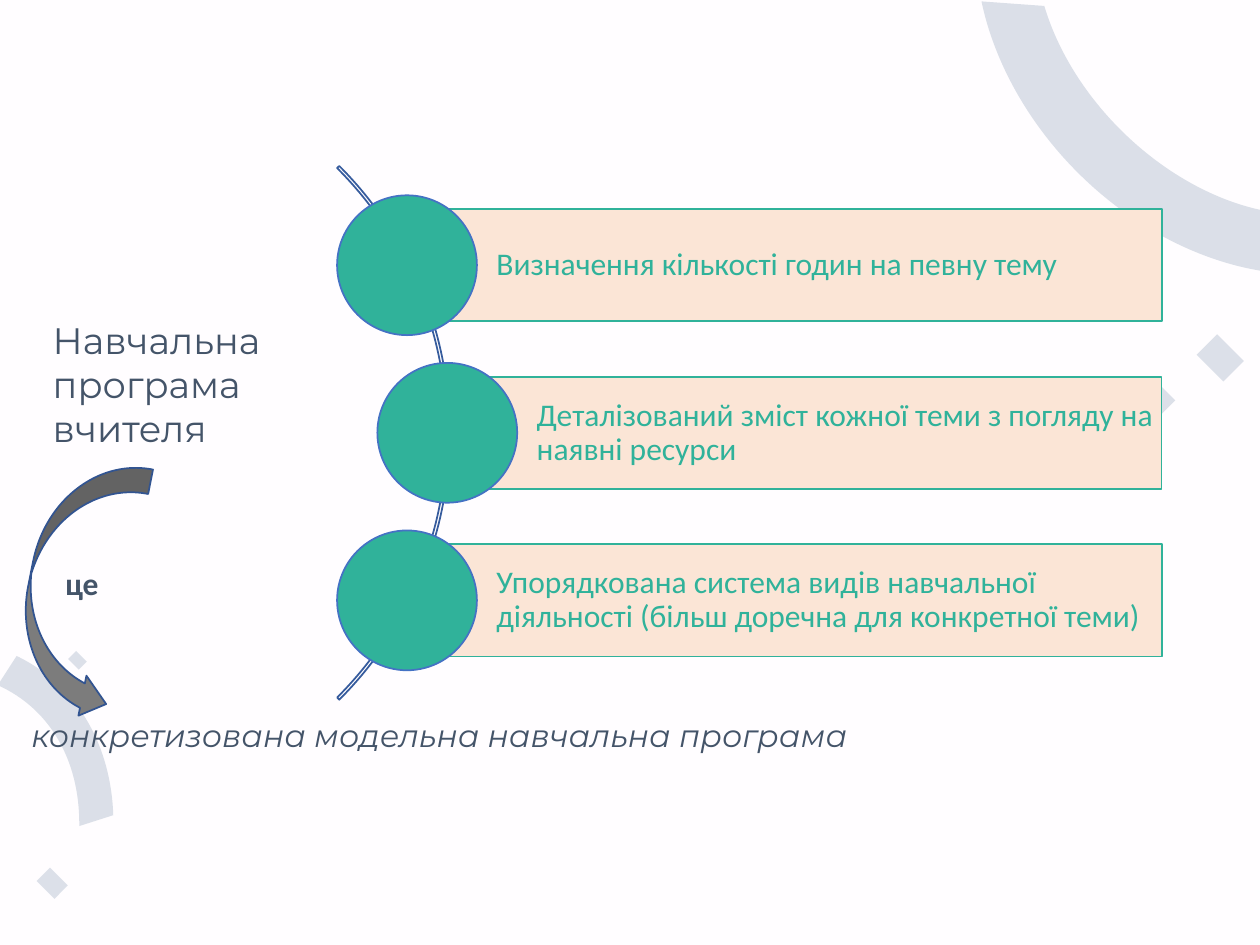
"""Build a slide on the teacher's curriculum: a curved list of three parts."""
from dataclasses import dataclass

from lxml import etree
from pptx import Presentation, util as u
from pptx.dml.color import RGBColor
from pptx.enum import shapes, text
from pptx.oxml.ns import qn

W, H = u.Inches(10), u.Inches(7.5)
COLS, ROWS = 100, 75
G = shapes.MSO_SHAPE


@dataclass(frozen=True)
class Theme:
    """Colours, fonts and type sizes of the slide."""
    bg: str = "FFFDFF"
    decor: str = "8497B0"
    accent: str = "30B29A"
    panel: str = "FBE5D6"
    ring: str = "4472C4"
    arc: str = "365B9D"
    arrow: str = "7C7C7C"
    arrow_line: str = "325491"
    ink: str = "445469"
    head: str = "Montserrat"
    body: str = "Calibri"
    title: int = 21
    size: int = 18


T = Theme()
ITEMS = [
    "Визначення кількості годин на певну тему",
    "Деталізований зміст кожної теми з погляду на наявні ресурси",
    "Упорядкована система видів навчальної діяльності (більш доречна для конкретної теми)",
]


def rgb(code):
    """Return a colour from its hex code."""
    return RGBColor.from_string(code)


def grid(x, y, w, h):
    """Turn columns and rows into slide lengths."""
    cw, rh = W / COLS, H / ROWS
    return [u.Emu(round(v)) for v in (x * cw, y * rh, w * cw, h * rh)]


def shape(s, kind, at, fill=None, line=None, rot=0, adj=(), alpha=None):
    """Add a preset shape with a flat fill and a thin outline."""
    sp = s.shapes.add_shape(kind, *grid(*at))
    sp.shadow.inherit = False
    sp.rotation = rot
    for i, v in enumerate(adj):
        sp.adjustments[i] = v
    if fill:
        sp.fill.solid()
        sp.fill.fore_color.rgb = rgb(fill)
    else:
        sp.fill.background()
    if alpha:
        clr = sp.fill._xPr.find(qn("a:solidFill"))[0]
        etree.SubElement(clr, qn("a:alpha")).set("val", str(alpha * 1000))
    if line:
        sp.line.color.rgb = rgb(line)
        sp.line.width = u.Pt(1)
    else:
        sp.line.fill.background()
    return sp


def write(tf, words, font=T.body, size=T.size, color=T.ink, bold=False,
          italic=False, spacing=None):
    """Put one left-aligned paragraph in a text frame."""
    p = tf.paragraphs[0]
    p.alignment = text.PP_ALIGN.LEFT
    if spacing:
        p.line_spacing = spacing
    r = p.add_run()
    r.text = words
    f = r.font
    f.name, f.size, f.bold, f.italic = font, u.Pt(size), bold, italic
    f.color.rgb = rgb(color)


def label(s, words, at, wrap=True, **fmt):
    """Add a text box."""
    tf = s.shapes.add_textbox(*grid(*at)).text_frame
    tf.word_wrap = wrap
    write(tf, words, **fmt)


def decor(s):
    """Add the pale arcs and diamonds behind the content."""
    arcs = [
        ((74.8, -15.6, 45.7, 34.3), 225, (121.76, 191.51, 0.14)),
        ((-28.1, 48.2, 34.3, 45.7), 42.5, (156.23, 179.91, 0.08)),
    ]
    for at, rot, adj in arcs:
        shape(s, G.BLOCK_ARC, at, T.decor, rot=rot, adj=adj, alpha=29)
    diamonds = [(95.7, 26.9, 2.3, 3), (91.3, 30.6, 1.5, 2),
                (3.4, 69.1, 1.5, 2), (5.7, 51.8, 0.9, 1.2)]
    for at in diamonds:
        shape(s, G.RECTANGLE, at, T.decor, rot=315, alpha=28)


def curved_list(s, top=16.6, pitch=13.3, height=8.9, right=92.2, dot=11.1):
    """Add the arc and one panel with a circle for each item."""
    shape(s, G.BLOCK_ARC, (-24.2, 4.4, 59.9, 59.9), line=T.arc,
          adj=(189, 27, 0.004))
    for i, words in enumerate(ITEMS):
        x = 35.5 if i == 1 else 32.3
        y = top + i * pitch
        sp = shape(s, G.RECTANGLE, (x, y, right - x, height), T.panel, T.accent)
        tf = sp.text_frame
        tf.word_wrap = True
        tf.vertical_anchor = text.MSO_ANCHOR.MIDDLE
        tf.margin_left = u.Inches(0.71)
        tf.margin_right = tf.margin_top = tf.margin_bottom = u.Inches(0.05)
        write(tf, words, color=T.accent, spacing=0.9)
        cy = y + (height - dot) / 2
        shape(s, G.OVAL, (x - dot / 2, cy, dot, dot), T.accent, T.ring)


def main():
    """Build and save the slide."""
    prs = Presentation()
    prs.slide_width, prs.slide_height = W, H
    s = prs.slides.add_slide(prs.slide_layouts[6])
    s.background.fill.solid()
    s.background.fill.fore_color.rgb = rgb(T.bg)
    decor(s)
    curved_list(s)
    label(s, "Навчальна програма вчителя", (3.2, 24.7, 22.9, 11.6),
          font=T.head, size=T.title)
    label(s, "конкретизована модельна навчальна програма",
          (1.5, 56.3, 81.6, 4), font=T.head, italic=True)
    label(s, "це", (4.2, 44.3, 4.7, 4), wrap=False, bold=True)
    shape(s, G.CURVED_RIGHT_ARROW, (2.3, 36.3, 7.9, 20.6), T.arrow,
          T.arrow_line, rot=11.3, adj=(0.25, 0.41, 0.25))
    prs.save("out.pptx")


if __name__ == "__main__":
    main()
